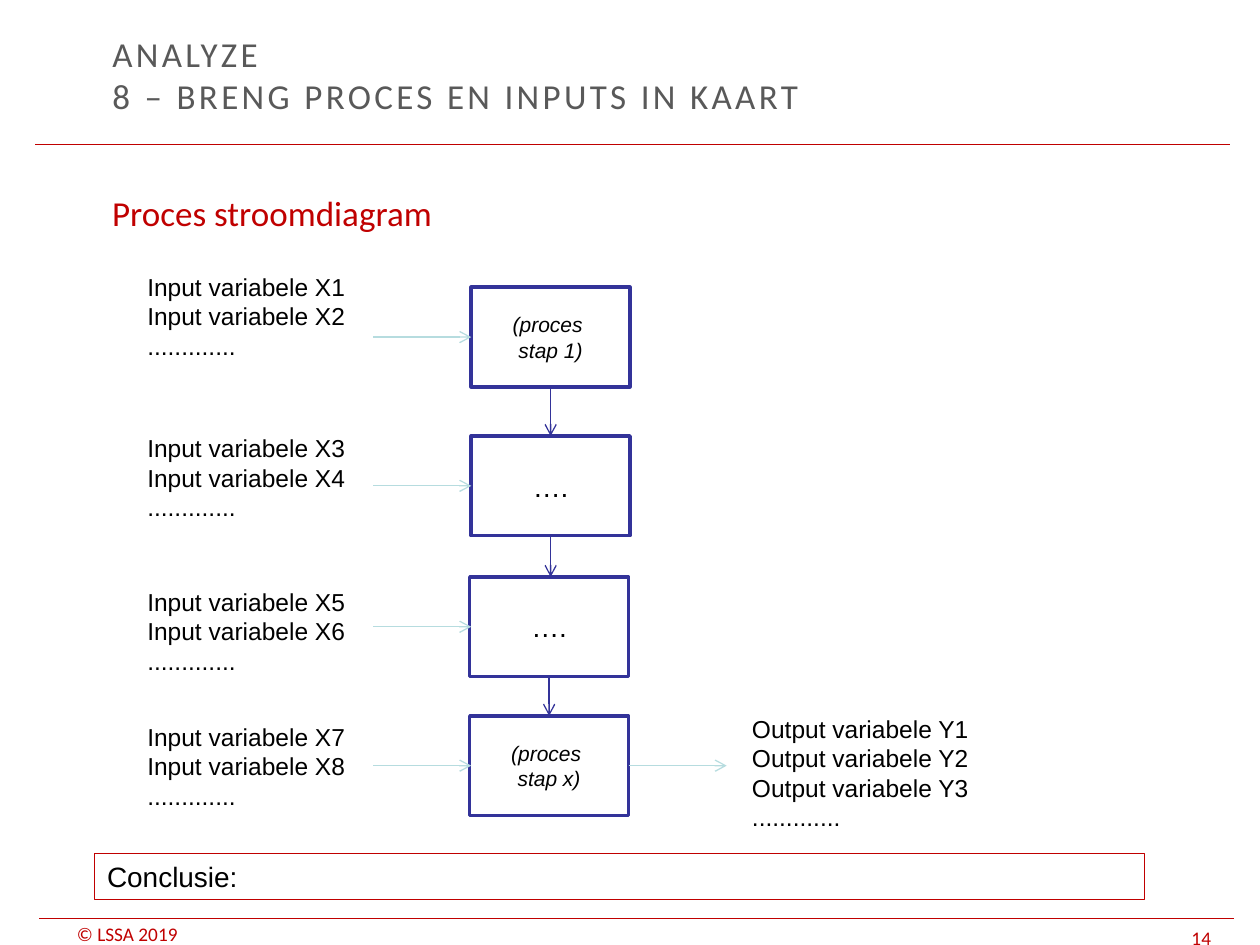
from typing import NamedTuple

from lxml import etree
from pptx import Presentation
from pptx import util as u
from pptx.dml.color import RGBColor
from pptx.enum import shapes, text
from pptx.oxml import ns

HUES = {"red": "C00000", "gray": "595959", "navy": "333399",
        "aqua": "B6DCDF", "black": "000000"}
DOTS = "............."
WIDE, HIGH = 3.2, 2.01
REACH = 1.98


class Style(NamedTuple):
    font: str
    size: int
    hue: str = "black"
    slant: bool = False


class Step(NamedTuple):
    label: str
    style: Style
    left: float
    top: float
    note: float


HEAD = Style("Calibri", 20, "gray")
TOPIC = Style("Calibri", 20, "red")
FOOT = Style("Calibri", 11, "red")
VARS = Style("Arial", 14)
ENDS = Style("Arial", 12, slant=True)
MIDS = Style("Arial", 16)

STEPS = [
    Step("(proces \nstap 1)", ENDS, 9.5, 5.79, 5.36),
    Step("….", MIDS, 9.5, 8.79, 8.61),
    Step("….", MIDS, 9.47, 11.63, 11.71),
    Step("(proces \nstap x)", ENDS, 9.47, 14.43, 14.43),
]


def tint(name: str) -> RGBColor:
    return RGBColor.from_string(HUES[name])


def write(frame, words: str, style: Style, align=text.PP_ALIGN.LEFT) -> None:
    frame.text = words
    for para in frame.paragraphs:
        para.alignment = align
        for run in para.runs:
            font = run.font
            font.name, font.size = style.font, u.Pt(style.size)
            font.italic = style.slant
            font.color.rgb = tint(style.hue)


def label(slide, words: str, style: Style, left: float, top: float,
          wide: float, high: float, wrap: bool = False):
    frame = slide.shapes.add_textbox(
        u.Cm(left), u.Cm(top), u.Cm(wide), u.Cm(high)).text_frame
    frame.word_wrap = wrap
    write(frame, words, style)
    return frame


def footer(slide, words: str, left: float, top: float, wide: float, high: float) -> None:
    frame = label(slide, words, FOOT, left, top, wide, high)
    frame.margin_top = frame.margin_bottom = 0
    frame.vertical_anchor = text.MSO_ANCHOR.BOTTOM


def line(slide, x1: float, y1: float, x2: float, y2: float,
         hue: str, arrow: bool = True) -> None:
    link = slide.shapes.add_connector(
        shapes.MSO_CONNECTOR.STRAIGHT, u.Cm(x1), u.Cm(y1), u.Cm(x2), u.Cm(y2))
    link.line.color.rgb = tint(hue)
    link.line.width = u.Pt(0.75)
    props = link._element.spPr
    if arrow:
        etree.SubElement(props.find(ns.qn("a:ln")), ns.qn("a:tailEnd"), type="arrow")
    etree.SubElement(props, ns.qn("a:effectLst"))


def block(slide, kind, left: float, top: float, wide: float, high: float,
          hue: str, weight: float):
    box = slide.shapes.add_shape(kind, u.Cm(left), u.Cm(top), u.Cm(wide), u.Cm(high))
    box.shadow.inherit = False
    box.fill.background()
    box.line.color.rgb = tint(hue)
    box.line.width = u.Pt(weight)
    return box.text_frame


def title(slide) -> None:
    head = slide.shapes.title
    head.left, head.top = u.Cm(2.01), u.Cm(0.66)
    head.width, head.height = u.Cm(18.01), u.Cm(1.68)
    frame = head.text_frame
    write(frame, "ANALYZE\v8 – BRENG PROCES EN INPUTS IN KAART", HEAD)
    frame.auto_size = text.MSO_AUTO_SIZE.NONE
    frame.vertical_anchor = text.MSO_ANCHOR.MIDDLE
    for run in frame.paragraphs[0].runs:
        run._r.get_or_add_rPr().set("spc", "190")


def flow(slide) -> None:
    for step in STEPS:
        frame = block(slide, shapes.MSO_SHAPE.FLOWCHART_PROCESS,
                      step.left, step.top, WIDE, HIGH, "navy", 2)
        frame.vertical_anchor = text.MSO_ANCHOR.MIDDLE
        write(frame, step.label, step.style, text.PP_ALIGN.CENTER)
    for step, after in zip(STEPS, STEPS[1:]):
        mid = step.left + WIDE / 2
        line(slide, mid, step.top + HIGH, mid, after.top, "navy")
    for i, step in enumerate(STEPS):
        mid = step.top + HIGH / 2
        line(slide, 9.5 - REACH, mid, 9.5, mid, "aqua")
        words = f"Input variabele X{2 * i + 1}\vInput variabele X{2 * i + 2}\n{DOTS}"
        label(slide, words, VARS, 2.72, step.note, 4.52, 2.06)
    last = STEPS[-1]
    edge, mid = last.left + WIDE, last.top + HIGH / 2
    line(slide, edge, mid, edge + REACH, mid, "aqua")
    words = f"Output variabele Y1\vOutput variabele Y2\nOutput variabele Y3\n{DOTS}"
    label(slide, words, VARS, 14.91, 14.27, 4.9, 2.64)


def main() -> None:
    deck = Presentation()
    deck.slide_width, deck.slide_height = u.Cm(25.4), u.Cm(19.05)
    slide = deck.slides.add_slide(deck.slide_layouts[5])
    footer(slide, "© LSSA 2019", 1.3, 18.59, 3.61, 0.46)
    footer(slide, "14", 23.77, 18.57, 1.63, 0.56)
    line(slide, 0.71, 2.92, 24.79, 2.92, "red", False)
    line(slide, 0.79, 18.52, 24.87, 18.52, "red", False)
    title(slide)
    label(slide, "Proces stroomdiagram", TOPIC, 2.01, 3.73, 22, 14, True)
    frame = block(slide, shapes.MSO_SHAPE.RECTANGLE, 1.91, 17.2, 21.16, 0.94, "red", 0.75)
    frame.vertical_anchor = text.MSO_ANCHOR.TOP
    write(frame, "Conclusie:", MIDS)
    flow(slide)
    deck.save("out.pptx")


if __name__ == "__main__":
    main()
